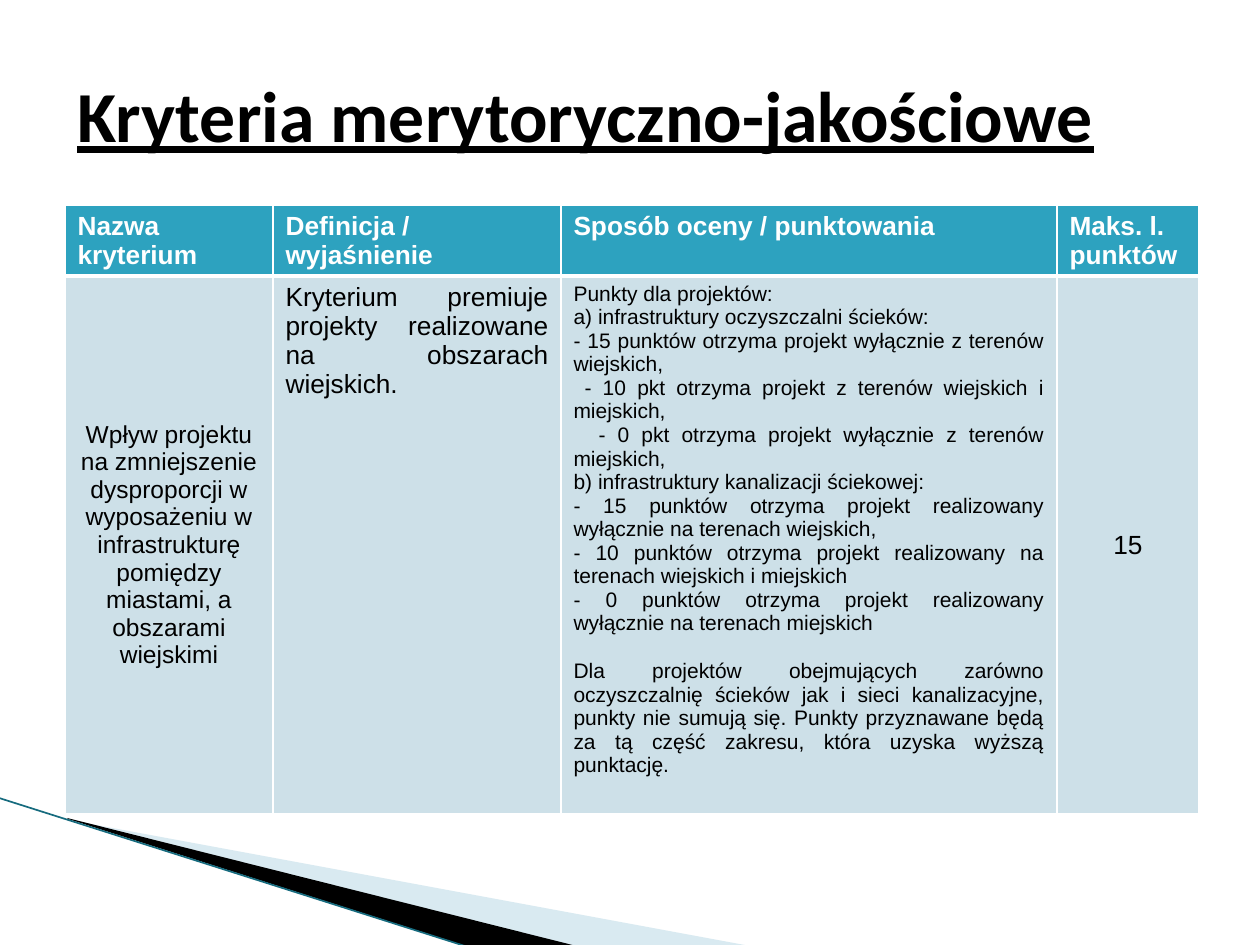
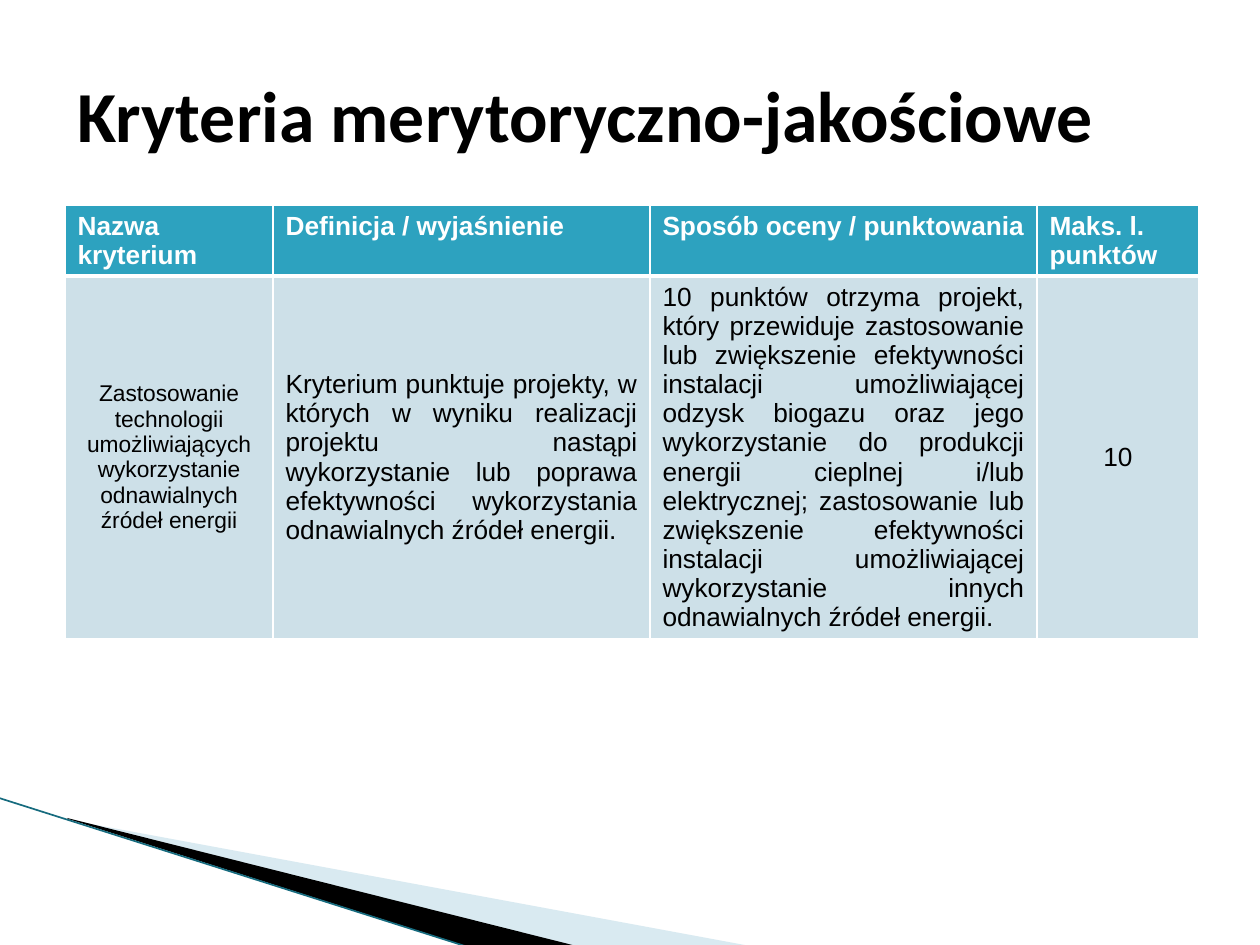
from dataclasses import dataclass

from lxml import etree
from pptx import Presentation
from pptx.dml.color import RGBColor
from pptx.enum.shapes import MSO_CONNECTOR
from pptx.enum.text import MSO_ANCHOR, PP_ALIGN
from pptx.oxml.ns import qn
from pptx.util import Emu, Pt

PX = 914400 / 126
PAGE_WIDTH, PAGE_HEIGHT = 1260, 945
MARGIN_LEFT, TABLE_TOP, HEADER_HEIGHT, CONTENT_WIDTH = 65, 205, 71, 1134

WHITE = RGBColor(0xFF, 0xFF, 0xFF)
BLACK = RGBColor(0, 0, 0)
HEADER_TEAL = RGBColor(0x2D, 0xA2, 0xBF)
CELL_BLUE = RGBColor(0xCD, 0xE0, 0xE8)
WEDGE_BLUE = RGBColor(0xA0, 0xCB, 0xDC)
EDGE_TEAL = RGBColor(0x16, 0x6B, 0x7E)

TOP, MIDDLE = MSO_ANCHOR.TOP, MSO_ANCHOR.MIDDLE
LEFT, CENTER, JUSTIFY = PP_ALIGN.LEFT, PP_ALIGN.CENTER, PP_ALIGN.JUSTIFY
STRAIGHT = MSO_CONNECTOR.STRAIGHT

TITLE = "Kryteria merytoryczno-jakościowe"
HEADINGS = ("Nazwa kryterium", "Definicja / wyjaśnienie",
            "Sposób oceny / punktowania", "Maks. l. punktów")


@dataclass(frozen=True)
class Line:
    text: str
    indent: int = 0
    space_before: int = 0


@dataclass(frozen=True)
class CellText:
    lines: tuple[Line, ...]
    size: int = 15
    align: PP_ALIGN = JUSTIFY
    anchor: MSO_ANCHOR = TOP
    bold: bool = False
    colour: RGBColor = BLACK


@dataclass(frozen=True)
class Criterion:
    columns: tuple[int, ...]
    body_height: int
    cells: tuple[CellText, ...]
    title_underlined: bool = False


@dataclass(frozen=True)
class Wedge:
    points: tuple[tuple[int, int], ...]
    colour: RGBColor
    opacity: int = 100


WEDGES = (
    Wedge(((69, 820), (750, 946), (575, 946), (69, 819)), WEDGE_BLUE, 40),
    Wedge(((67, 818), (576, 946), (469, 947), (68, 819)), BLACK),
)

CRITERIA = (
    Criterion(
        columns=(208, 288, 496, 142),
        body_height=538,
        title_underlined=True,
        cells=(
            CellText((Line("Wpływ projektu na zmniejszenie dysproporcji w wyposażeniu w "
                           "infrastrukturę pomiędzy miastami, a obszarami wiejskimi"),),
                     14, CENTER, MIDDLE),
            CellText((Line("Kryterium premiuje projekty realizowane na obszarach wiejskich."),)),
            CellText((
                Line("Punkty dla projektów:"),
                Line("a) infrastruktury oczyszczalni ścieków:"),
                Line("- 15 punktów otrzyma projekt wyłącznie z terenów wiejskich,"),
                Line("- 10 pkt otrzyma projekt z terenów wiejskich i miejskich,", indent=11),
                Line("- 0 pkt otrzyma projekt wyłącznie z terenów miejskich,", indent=25),
                Line("b) infrastruktury kanalizacji ściekowej:"),
                Line("- 15 punktów otrzyma projekt realizowany wyłącznie na terenach wiejskich,"),
                Line("- 10 punktów otrzyma projekt realizowany na terenach wiejskich i miejskich"),
                Line("- 0 punktów otrzyma projekt realizowany wyłącznie na terenach miejskich"),
                Line("Dla projektów obejmujących zarówno oczyszczalnię ścieków jak i sieci "
                     "kanalizacyjne, punkty nie sumują się. Punkty przyznawane będą za tą część "
                     "zakresu, która uzyska wyższą punktację.", space_before=14),
            ), 12),
            CellText((Line("15"),), 15, CENTER, MIDDLE),
        ),
    ),
    Criterion(
        columns=(208, 377, 387, 162),
        body_height=361,
        cells=(
            CellText((Line("Zastosowanie technologii umożliwiających wykorzystanie "
                           "odnawialnych źródeł energii"),), 13, CENTER, MIDDLE),
            CellText((Line("Kryterium punktuje projekty, w których w wyniku realizacji projektu "
                           "nastąpi wykorzystanie lub poprawa efektywności wykorzystania "
                           "odnawialnych źródeł energii."),), anchor=MIDDLE),
            CellText((Line("10 punktów otrzyma projekt, który przewiduje zastosowanie lub "
                           "zwiększenie efektywności instalacji umożliwiającej odzysk biogazu "
                           "oraz jego wykorzystanie do produkcji energii cieplnej i/lub "
                           "elektrycznej; zastosowanie lub zwiększenie efektywności instalacji "
                           "umożliwiającej wykorzystanie innych odnawialnych źródeł energii."),)),
            CellText((Line("10"),), 15, CENTER, MIDDLE),
        ),
    ),
)


def px(length: int) -> Emu:
    return Emu(round(length * PX))


def apply_format(target, values: dict) -> None:
    for name, value in values.items():
        setattr(target, name, value)


def add_span(paragraph, text: str, colour: RGBColor, font_values: dict) -> None:
    span = paragraph.add_run()
    span.text = text
    apply_format(span.font, font_values)
    span.font.color.rgb = colour


def add_colour(parent, colour: RGBColor):
    fill = etree.SubElement(parent, qn("a:solidFill"))
    return etree.SubElement(fill, qn("a:srgbClr"), val=str(colour))


def draw_wedge(page, wedge: Wedge) -> None:
    start, *others = wedge.points
    builder = page.shapes.build_freeform(*start, scale=PX)
    builder.add_line_segments(others, close=True)
    shape = builder.convert_to_shape()
    shape.shadow.inherit = False
    shape.line.fill.background()
    shape.fill.solid()
    shape.fill.fore_color.rgb = wedge.colour
    if wedge.opacity < 100:
        colour = shape.fill._xPr.find(".//" + qn("a:srgbClr"))
        etree.SubElement(colour, qn("a:alpha"), val=str(wedge.opacity * 1000))


def draw_corner(page) -> None:
    """Draw the wedges and the thin edge in the lower left corner."""
    for wedge in WEDGES:
        draw_wedge(page, wedge)
    edge = page.shapes.add_connector(STRAIGHT, px(-1), px(798), px(468), px(947))
    edge.line.color.rgb = EDGE_TEAL
    edge.line.width = Pt(0.95)
    etree.SubElement(edge._element.spPr, qn("a:effectLst"))


def draw_title(page, underlined: bool) -> None:
    box = page.shapes.add_textbox(px(MARGIN_LEFT), px(35), px(CONTENT_WIDTH), px(158))
    apply_format(box.text_frame, {"word_wrap": True, "vertical_anchor": MIDDLE})
    add_span(box.text_frame.paragraphs[0], TITLE, BLACK,
             {"name": "Calibri", "size": Pt(41), "bold": True, "underline": underlined})


def set_borders(cell, top: int, bottom: int) -> None:
    properties = cell._tc.get_or_add_tcPr()
    for side, points in {"L": 1, "R": 1, "T": top, "B": bottom}.items():
        border = etree.SubElement(properties, qn(f"a:ln{side}"), w=str(Pt(points)))
        add_colour(border, WHITE)


def fill_cell(cell, content: CellText, background: RGBColor) -> None:
    cell.fill.solid()
    cell.fill.fore_color.rgb = background
    cell.vertical_anchor = content.anchor
    frame = cell.text_frame
    for index, line in enumerate(content.lines):
        paragraph = frame.add_paragraph() if index else frame.paragraphs[0]
        paragraph.alignment = content.align
        if line.space_before:
            paragraph.space_before = Pt(line.space_before)
        if line.indent:
            paragraph._p.get_or_add_pPr().set("indent", str(px(line.indent)))
        add_span(paragraph, line.text, content.colour,
                 {"name": "Arial", "size": Pt(content.size), "bold": content.bold})


def draw_table(page, criterion: Criterion) -> None:
    heights = (HEADER_HEIGHT, criterion.body_height)
    frame = page.shapes.add_table(2, len(HEADINGS), px(MARGIN_LEFT), px(TABLE_TOP),
                                  px(CONTENT_WIDTH), px(sum(heights)))
    table = frame.table
    apply_format(table, {"first_row": False, "horz_banding": False})
    for row, height in zip(table.rows, heights):
        row.height = px(height)
    for column, width in zip(table.columns, criterion.columns):
        column.width = px(width)
    for index, (heading, content) in enumerate(zip(HEADINGS, criterion.cells)):
        header, body = table.cell(0, index), table.cell(1, index)
        set_borders(header, 1, 3)
        set_borders(body, 3, 1)
        fill_cell(header, CellText((Line(heading),), align=LEFT, bold=True, colour=WHITE),
                  HEADER_TEAL)
        fill_cell(body, content, CELL_BLUE)


def main() -> None:
    deck = Presentation()
    apply_format(deck, {"slide_width": px(PAGE_WIDTH), "slide_height": px(PAGE_HEIGHT)})
    for criterion in CRITERIA:
        page = deck.slides.add_slide(deck.slide_layouts[6])
        draw_corner(page)
        draw_table(page, criterion)
        draw_title(page, criterion.title_underlined)
    deck.save("out.pptx")


if __name__ == "__main__":
    main()
